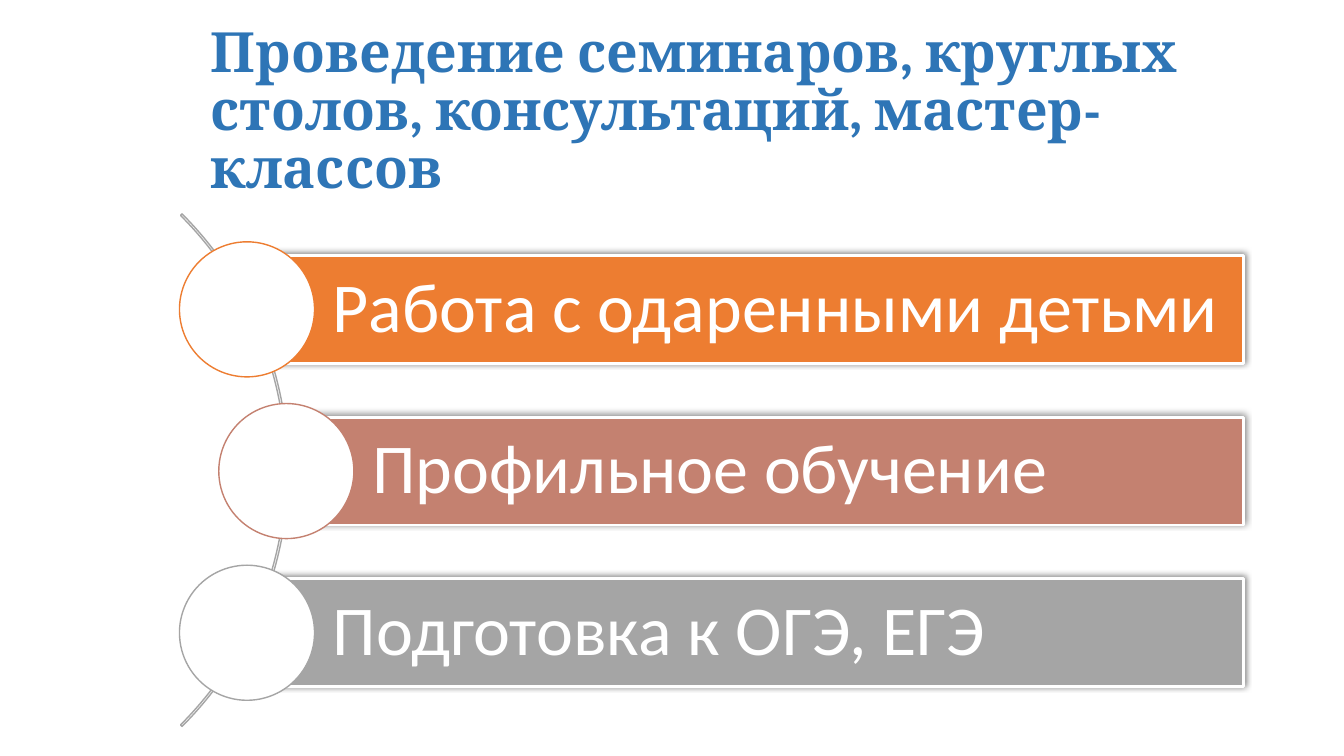
from lxml import etree
from pptx import Presentation
from pptx.dml.color import RGBColor
from pptx.enum import shapes, text
from pptx.oxml.ns import qn
from pptx.util import Pt

BLUE = RGBColor(0x2E, 0x75, 0xB6)
ORANGE = RGBColor(0xED, 0x7D, 0x31)
ROSE = RGBColor(0xC4, 0x81, 0x70)
GRAY = RGBColor(0xA5, 0xA5, 0xA5)
WHITE = RGBColor(0xFF, 0xFF, 0xFF)

TOPICS = [
    ("Работа с одаренными детьми", ORANGE, 0),
    ("Профильное обучение", ROSE, 28.1),
    ("Подготовка к ОГЭ, ЕГЭ", GRAY, 0),
]
CIRCLE_LEFT, FIRST_CENTER, ROW_PITCH = 128.2, 221, 115.5
CIRCLE_SIZE, BAR_HEIGHT, BAR_RIGHT = 96.5, 77, 888.5


def add_outlined(slide, kind, left, top, width, height, fill, line, weight):
    shape = slide.shapes.add_shape(kind, Pt(left), Pt(top), Pt(width), Pt(height))
    shape.shadow.inherit = False
    if fill is None:
        shape.fill.background()
    else:
        shape.fill.solid()
        shape.fill.fore_color.rgb = fill
    shape.line.color.rgb = line
    shape.line.width = Pt(weight)
    return shape


def add_outer_shadow(shape):
    """Fill the shape's empty effect list with a soft half-transparent shadow."""
    effects = shape.element.spPr.find(qn("a:effectLst"))
    shadow = etree.SubElement(
        effects, qn("a:outerShdw"), blurRad=str(Pt(5)), dist=str(Pt(2)),
        dir=str(245 * 60000), algn="ctr", rotWithShape="0")
    color = etree.SubElement(shadow, qn("a:srgbClr"), val="000000")
    etree.SubElement(color, qn("a:alpha"), val="50000")


def write_text(shape, words, font_name, size, color, line_spacing, bold=False):
    frame = shape.text_frame
    frame.word_wrap = True
    frame.vertical_anchor = text.MSO_ANCHOR.MIDDLE
    paragraph = frame.paragraphs[0]
    paragraph.text = words
    paragraph.alignment = text.PP_ALIGN.LEFT
    paragraph.line_spacing = line_spacing
    font = paragraph.font
    font.name, font.size, font.bold = font_name, Pt(size), bold
    font.color.rgb = color


def add_title(slide, words):
    title = slide.shapes.add_textbox(Pt(143.3), Pt(28.8), Pt(751), Pt(104.4))
    write_text(title, words, "Cambria", 39.6, BLUE, 0.87, bold=True)


def add_arc(slide):
    arc = add_outlined(slide, shapes.MSO_SHAPE.BLOCK_ARC,
                       -311.8, 77, 517.7, 517.7, None, GRAY, 1)
    for index, value in enumerate((189, 27, 0.003)):
        arc.adjustments[index] = value


def add_topic(slide, words, color, circle_left, center):
    """Draw a bar that starts at the middle of the circle covering its left end."""
    bar_left = circle_left + CIRCLE_SIZE / 2
    bar = add_outlined(slide, shapes.MSO_SHAPE.RECTANGLE,
                       bar_left, center - BAR_HEIGHT / 2,
                       BAR_RIGHT - bar_left, BAR_HEIGHT, color, WHITE, 2)
    add_outer_shadow(bar)
    write_text(bar, words, "Calibri", 50, WHITE, 0.9)
    frame = bar.text_frame
    frame.margin_left = Pt(61.2)
    frame.margin_top = frame.margin_right = frame.margin_bottom = Pt(10)
    add_outlined(slide, shapes.MSO_SHAPE.OVAL,
                 circle_left, center - CIRCLE_SIZE / 2,
                 CIRCLE_SIZE, CIRCLE_SIZE, WHITE, color, 1)


def main():
    presentation = Presentation()
    presentation.slide_width, presentation.slide_height = Pt(960), Pt(540)
    slide = presentation.slides.add_slide(presentation.slide_layouts[6])
    add_title(slide, "Проведение семинаров, круглых столов, консультаций, мастер-классов")
    add_arc(slide)
    for row, (words, color, indent) in enumerate(TOPICS):
        add_topic(slide, words, color, CIRCLE_LEFT + indent,
                  FIRST_CENTER + row * ROW_PITCH)
    presentation.save("out.pptx")


if __name__ == "__main__":
    main()
